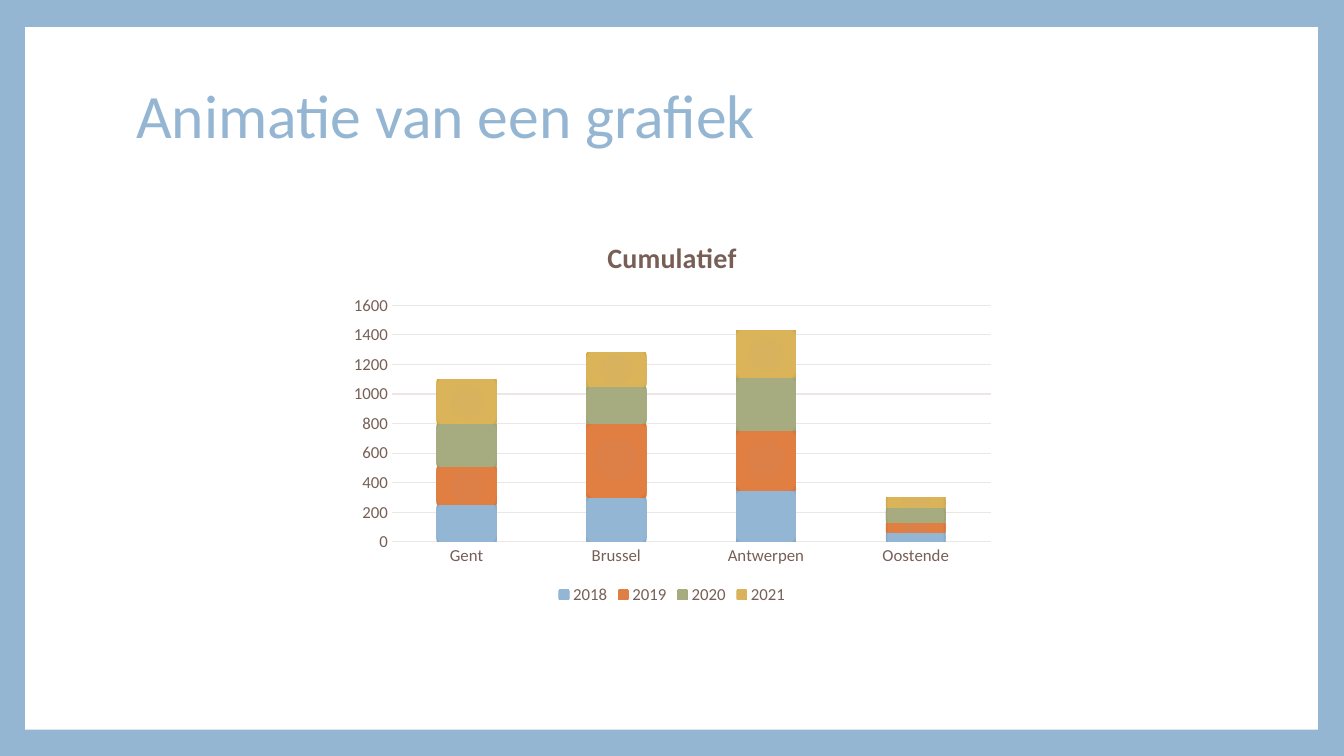
from lxml import etree
from pptx import Presentation
from pptx.chart.data import CategoryChartData
from pptx.dml.color import RGBColor
from pptx.enum.chart import XL_CHART_TYPE, XL_LEGEND_POSITION, XL_TICK_MARK
from pptx.enum.shapes import MSO_SHAPE
from pptx.enum.text import MSO_ANCHOR, PP_ALIGN
from pptx.oxml import parse_xml
from pptx.oxml.ns import nsdecls, qn
from pptx.util import Inches, Pt

STACKED = XL_CHART_TYPE.COLUMN_STACKED
LEGEND_BOTTOM = XL_LEGEND_POSITION.BOTTOM
NO_TICK = XL_TICK_MARK.NONE

FONT = "Calibri"
BLUE, WHITE, BROWN, GRID = "94B6D2", "FFFFFF", "775F55", "ECE6E4"
TITLE = "Animatie van een grafiek"
CHART_TITLE = "Cumulatief"
CITIES = ["Gent", "Brussel", "Antwerpen", "Oostende"]
YEARS = [  # name, values, gradient colours from centre to edge
    ("2018", (250, 300, 350, 60), ("94B6D2", "92B6D4", "81A6C4")),
    ("2019", (260, 500, 400, 70), ("DD8047", "E17F43", "D67133")),
    ("2020", (290, 250, 360, 100), ("A5AB81", "A6AC80", "989F71")),
    ("2021", (300, 230, 320, 70), ("D8B25C", "DBB359", "CFA648")),
]
GRADIENT_STOPS = (0, 90, 100)
PLOT_AREA = {"x": 0.077, "y": 0.22, "w": 0.904, "h": 0.608}


def rgb(color):
    return RGBColor.from_string(color)


def inches(*lengths):
    return [Inches(length) for length in lengths]


def style_font(font, size, color, bold=False):
    font.name, font.size, font.bold = FONT, Pt(size), bold
    font.color.rgb = rgb(color)


def style_line(line):
    line.color.rgb = rgb(GRID)
    line.width = Pt(0.75)


def fill_gradient(series, colors):
    """Give a series a circular gradient."""
    stops = "".join(
        f'<a:gs pos="{stop * 1000}"><a:srgbClr val="{color}"/></a:gs>'
        for stop, color in zip(GRADIENT_STOPS, colors))
    edges = " ".join(f'{side}="100000"' for side in "ltrb")
    properties = series._element.get_or_add_spPr()
    properties.insert(0, parse_xml(
        f'<a:gradFill {nsdecls("a")} rotWithShape="1"><a:gsLst>{stops}</a:gsLst>'
        f'<a:path path="circle"><a:fillToRect {edges}/></a:path></a:gradFill>'))


def place_plot_area(chart):
    """Fix the inner plot area as fractions of the chart."""
    plot_area = chart._chartSpace.find(".//" + qn("c:plotArea"))
    for old_layout in plot_area.findall(qn("c:layout")):
        plot_area.remove(old_layout)
    layout = etree.Element(qn("c:layout"))
    manual = etree.SubElement(layout, qn("c:manualLayout"))
    settings = [("layoutTarget", "inner"), ("xMode", "edge"), ("yMode", "edge")]
    for name, value in settings + list(PLOT_AREA.items()):
        etree.SubElement(manual, qn("c:" + name)).set("val", str(value))
    plot_area.insert(0, layout)


def add_title(slide):
    title = slide.shapes.title
    title.left, title.top, title.width, title.height = inches(1.25, 0.67, 10.8, 1.01)
    title.text_frame.vertical_anchor = MSO_ANCHOR.MIDDLE
    paragraph = title.text_frame.paragraphs[0]
    paragraph.alignment = PP_ALIGN.LEFT
    paragraph.line_spacing = 0.9
    run = paragraph.add_run()
    run.text = TITLE
    style_font(run.font, 44, BLUE)


def add_panel(slide):
    """Add the white panel behind everything else."""
    panel = slide.shapes.add_shape(MSO_SHAPE.RECTANGLE, *inches(0.25, 0.27, 12.82, 6.97))
    panel.shadow.inherit = False
    panel.fill.solid()
    panel.fill.fore_color.rgb = rgb(WHITE)
    panel.line.fill.background()
    slide.shapes._spTree.insert(2, panel._element)


def add_city_chart(slide):
    data = CategoryChartData()
    data.categories = CITIES
    for name, values, _ in YEARS:
        data.add_series(name, values)
    chart = slide.shapes.add_chart(STACKED, *inches(3.38, 2.18, 6.57, 3.86), data).chart
    style_font(chart.font, 10, "000000")

    chart.has_title = True
    run = chart.chart_title.text_frame.paragraphs[0].add_run()
    run.text = CHART_TITLE
    style_font(run.font, 20, BROWN, bold=True)
    chart.chart_title.include_in_layout = False

    chart.has_legend = True
    chart.legend.position = LEGEND_BOTTOM
    chart.legend.include_in_layout = False
    style_font(chart.legend.font, 12, BROWN)

    for axis in (chart.category_axis, chart.value_axis):
        axis.major_tick_mark = axis.minor_tick_mark = NO_TICK
        style_font(axis.tick_labels.font, 12, BROWN)
    style_line(chart.category_axis.format.line)
    chart.value_axis.format.line.fill.background()
    style_line(chart.value_axis.major_gridlines.format.line)

    plot = chart.plots[0]
    plot.gap_width, plot.overlap = 150, 100
    plot.vary_by_categories = False
    for series, (_, _, colors) in zip(plot.series, YEARS):
        fill_gradient(series, colors)
    place_plot_area(chart)


def main():
    presentation = Presentation()
    presentation.slide_width, presentation.slide_height = inches(13.33, 7.5)
    slide = presentation.slides.add_slide(presentation.slide_layouts[5])
    slide.background.fill.solid()
    slide.background.fill.fore_color.rgb = rgb(BLUE)
    add_panel(slide)
    add_title(slide)
    add_city_chart(slide)
    presentation.save("out.pptx")


if __name__ == "__main__":
    main()
